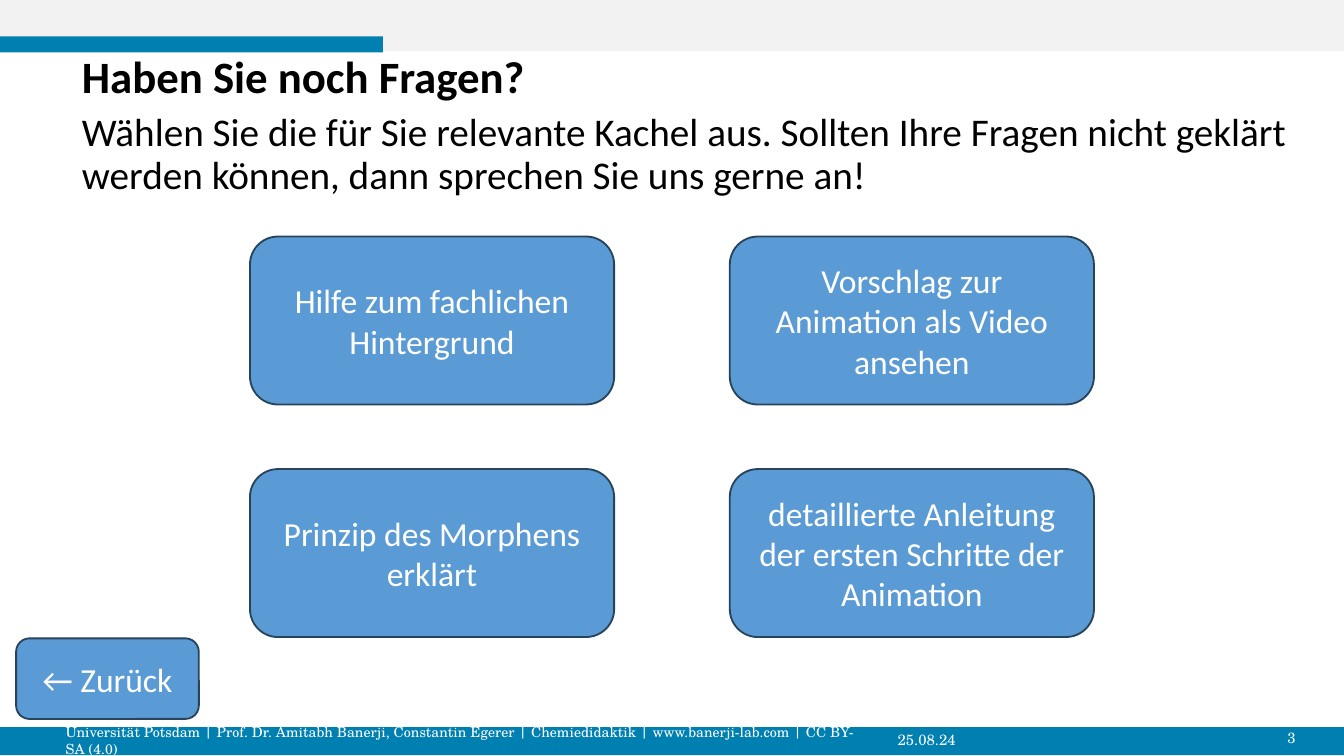
from pptx import Presentation
from pptx.dml.color import RGBColor
from pptx.enum.shapes import MSO_SHAPE as Shape
from pptx.enum.text import MSO_ANCHOR as Anchor, MSO_AUTO_SIZE as AutoSize, PP_ALIGN as Align
from pptx.oxml.ns import qn
from pptx.util import Inches, Pt
from lxml.etree import SubElement


def color(hex_value):
    return RGBColor.from_string(hex_value)


def write(frame, text, font, size, ink, align=Align.LEFT, anchor=Anchor.MIDDLE, bold=False):
    frame.text = text
    frame.word_wrap = True
    frame.auto_size = AutoSize.NONE
    frame.vertical_anchor = anchor
    paragraph = frame.paragraphs[0]
    paragraph.alignment = align
    for run in paragraph.runs:
        run.font.name = font
        run.font.size = Pt(size)
        run.font.bold = bold
        run.font.color.rgb = color(ink)
    return paragraph


deck = Presentation()
deck.slide_width = Inches(10)
deck.slide_height = deck.slide_width * 9 // 16
slide = deck.slides.add_slide(deck.slide_layouts[1])
shapes = slide.shapes

for left, top, width, height, fill in [
    (0, 0, 10, 0.38, "F2F2F2"),
    (0, 0.27, 2.85, 0.12, "0080B1"),
    (0, 5.41, 10, 0.21, "0080B1"),
]:
    band = shapes.add_shape(Shape.RECTANGLE, *map(Inches, (left, top, width, height)))
    band.shadow.inherit = False
    band.fill.solid()
    band.fill.fore_color.rgb = color(fill)
    band.line.fill.background()

heading, intro = shapes.title, slide.placeholders[1]
for holder, top, height in [(heading, 0.39, 0.39), (intro, 0.79, 4.56)]:
    holder.left, holder.top = Inches(0.51), Inches(top)
    holder.width, holder.height = Inches(9.22), Inches(height)

question = write(heading.text_frame, "Haben Sie noch Fragen?", "Calibri", 24, "000000", bold=True)
question.line_spacing = 0.9

invitation = write(
    intro.text_frame,
    "Wählen Sie die für Sie relevante Kachel aus. Sollten Ihre Fragen nicht geklärt "
    "werden können, dann sprechen Sie uns gerne an!",
    "Calibri", 21, "000000", anchor=Anchor.TOP,
)
invitation.line_spacing = 0.9
invitation.space_before = Pt(0)
properties = invitation._p.get_or_add_pPr()
properties.set("marL", "0")
properties.set("indent", "0")
SubElement(properties, qn("a:buNone"))

credits = (
    "Universität Potsdam | Prof. Dr. Amitabh Banerji, Constantin Egerer | "
    "Chemiedidaktik | www.banerji-lab.com | CC BY-SA (4.0)"
)
for text, left, top, width, size, align in [
    (credits, 0.39, 5.36, 6.1, 7.5, Align.LEFT),
    ("25.08.24", 6.58, 5.35, 1.84, 8, Align.LEFT),
    ("3", 8.68, 5.34, 1.06, 8, Align.RIGHT),
]:
    footer = shapes.add_textbox(Inches(left), Inches(top), Inches(width), Inches(0.3))
    write(footer.text_frame, text, "TeX Gyre Schola", size, "FFFFFF", align)

tile_width, tile_height = 2.71, 1.25
first_column, column_step = 1.86, 3.57
first_row, row_step = 1.76, 1.73
topics = [
    ["Hilfe zum fachlichen Hintergrund", "Vorschlag zur Animation als Video ansehen"],
    ["Prinzip des Morphens erklärt", "detaillierte Anleitung der ersten Schritte der Animation"],
]
buttons = [
    (topic, first_column + column * column_step, first_row + row * row_step, tile_width, tile_height)
    for row, row_topics in enumerate(topics)
    for column, topic in enumerate(row_topics)
]
buttons.append(("← Zurück", 0.12, 4.75, 1.36, 0.6))

for text, *place in buttons:
    button = shapes.add_shape(Shape.ROUNDED_RECTANGLE, *map(Inches, place))
    button.shadow.inherit = False
    button.fill.solid()
    button.fill.fore_color.rgb = color("5B9BD5")
    button.line.color.rgb = color("28445D")
    button.line.width = Pt(1)
    write(button.text_frame, text, "Calibri", 18, "FFFFFF", Align.CENTER)

deck.save("out.pptx")
